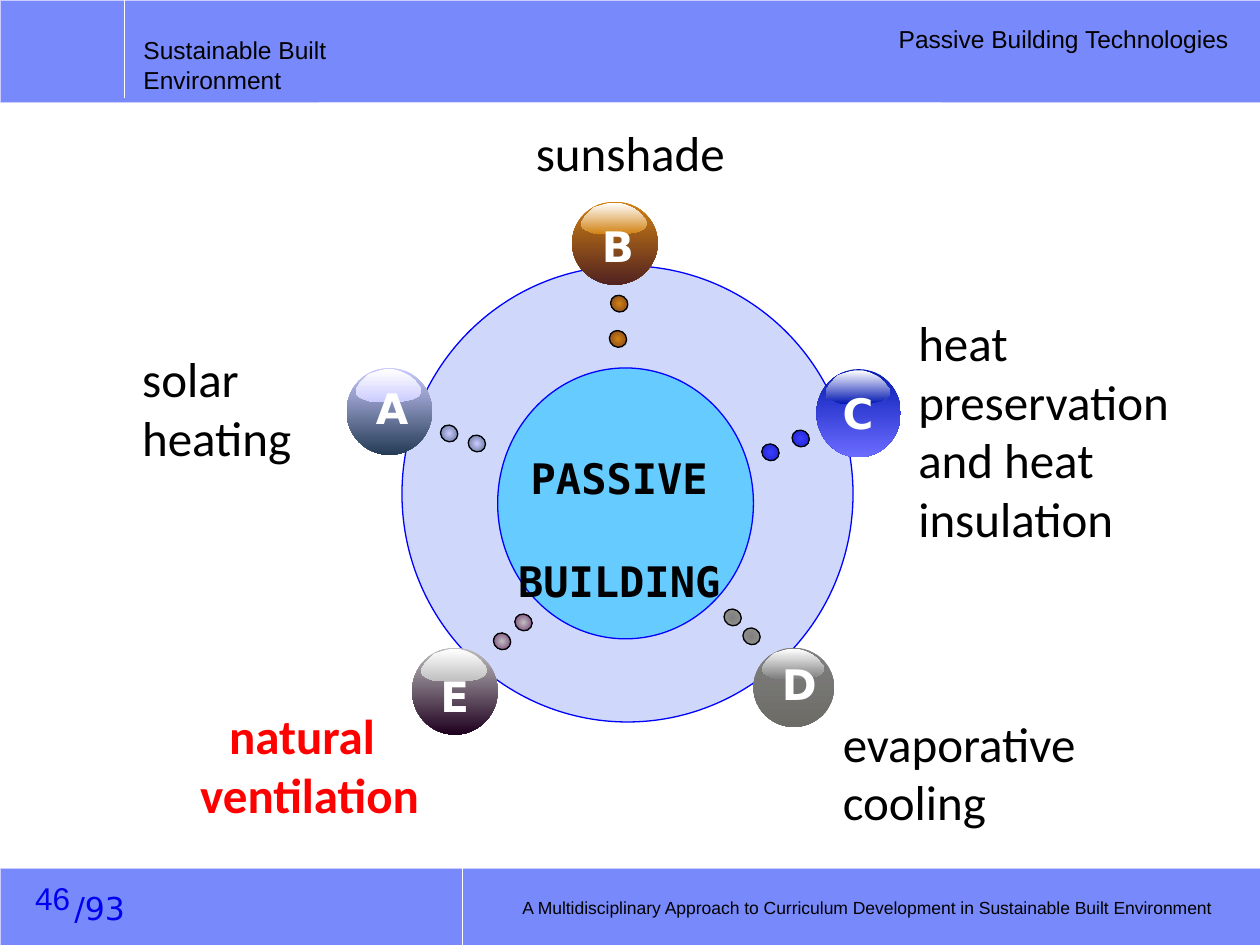
from lxml import etree
from pptx import Presentation
from pptx.dml.color import RGBColor
from pptx.enum.shapes import MSO_CONNECTOR, MSO_SHAPE
from pptx.enum.text import MSO_ANCHOR, PP_ALIGN
from pptx.oxml.ns import qn
from pptx.util import Inches, Pt

RECT, OVAL = MSO_SHAPE.RECTANGLE, MSO_SHAPE.OVAL
STRAIGHT = MSO_CONNECTOR.STRAIGHT
LEFT, CENTER, RIGHT = PP_ALIGN.LEFT, PP_ALIGN.CENTER, PP_ALIGN.RIGHT
TOP, MIDDLE = MSO_ANCHOR.TOP, MSO_ANCHOR.MIDDLE

BLACK = RGBColor(0x00, 0x00, 0x00)
WHITE = RGBColor(0xFF, 0xFF, 0xFF)
RED = RGBColor(0xFF, 0x00, 0x00)
BAND = RGBColor(0x78, 0x89, 0xFB)
LAVENDER = RGBColor(0xCC, 0xCC, 0xFF)
RING = RGBColor(0xCF, 0xD7, 0xFB)
CORE = RGBColor(0x66, 0xCC, 0xFF)
OUTLINE = RGBColor(0x00, 0x00, 0xFF)
PAGE_BLUE = RGBColor(0x00, 0x00, 0xF0)
AMBER = RGBColor(0xD1, 0x82, 0x13)
BROWN = RGBColor(0x51, 0x22, 0x21)
DOT_BROWN = RGBColor(0x5A, 0x25, 0x24)
SILVER = RGBColor(0xC0, 0xC0, 0xC0)
DARK_PLUM = RGBColor(0x1F, 0x00, 0x1F)
PLUM = RGBColor(0x55, 0x00, 0x55)
ROYAL = RGBColor(0x05, 0x1A, 0xB3)
PERIWINKLE = RGBColor(0x6C, 0x6C, 0xFF)
BRIGHT_BLUE = RGBColor(0x3E, 0x3E, 0xFF)
GRAY = RGBColor(0x80, 0x80, 0x80)
DARK_GRAY = RGBColor(0x6C, 0x6B, 0x66)
WARM_GRAY = RGBColor(0x9F, 0x9D, 0x96)
NAVY = RGBColor(0x24, 0x3B, 0x56)
SLATE = RGBColor(0x2A, 0x45, 0x65)

# Outline of the gloss on a ball, in hundredths of an inch
GLOSS_WIDTH, GLOSS_HEIGHT = 52, 26
GLOSS = [(51, 14), (52, 16), (52, 19), (50, 21), (49, 22), (45, 24), (40, 25),
         (35, 26), (18, 26), (13, 26), (9, 25), (4, 23), (1, 21), (0, 19),
         (0, 16), (2, 13), (3, 11), (6, 8), (10, 4), (13, 3), (19, 1), (23, 0),
         (30, 0), (36, 2), (42, 5), (47, 9), (49, 12)]

# letter, ball box, letter left/top/width, ball colours, dot colours, dot corners
BALLS = [
    ("B", (4.54, 1.6, 0.68, 0.66), (4.66, 1.7, 0.47), (AMBER, BROWN),
     (AMBER, DOT_BROWN), [(4.85, 2.34), (4.84, 2.62)]),
    ("E", (3.27, 5.14, 0.68, 0.69), (3.38, 5.27, 0.44), (SILVER, DARK_PLUM),
     (SILVER, PLUM), [(3.92, 5.02), (4.09, 4.87)]),
    ("C", (6.48, 2.93, 0.67, 0.7), (6.58, 3.03, 0.45), (ROYAL, PERIWINKLE),
     (BRIGHT_BLUE, ROYAL), [(6.29, 3.41), (6.05, 3.52)]),
    ("D", (5.98, 5.14, 0.64, 0.63), (6.09, 5.18, 0.49), (GRAY, DARK_GRAY),
     (GRAY, WARM_GRAY), [(5.9, 4.98), (5.75, 4.83)]),
    ("A", (2.75, 2.92, 0.68, 0.69), (2.87, 2.99, 0.47), (LAVENDER, NAVY),
     (LAVENDER, SLATE), [(3.5, 3.37), (3.72, 3.45)]),
]

TECHNIQUES = [
    ("solar heating", (1.03, 2.72, 2.09, 1.03), LEFT),
    ("sunshade", (3.3, 0.92, 2.55, 0.57), RIGHT),
    ("heat preservation and heat insulation", (7.19, 2.43, 2.66, 1.97), LEFT),
    ("evaporative cooling", (6.59, 5.61, 2.28, 1.03), LEFT),
]


class SlideBuilder:
    label_font = "Calibri"
    header_font = "Arial"
    letter_font = "DejaVu Sans"
    core_font = "DejaVu Sans Mono"

    def __init__(self, slide):
        self.shapes = slide.shapes

    def shape(self, kind, box, fill=None, line=None, line_width=0.75):
        shape = self.shapes.add_shape(kind, *map(Inches, box))
        shape.shadow.inherit = False
        if fill is not None:
            shape.fill.solid()
            shape.fill.fore_color.rgb = fill
        if line is None:
            shape.line.fill.background()
        else:
            shape.line.color.rgb = line
            shape.line.width = Pt(line_width)
        return shape

    def divider(self, x, top, bottom):
        line = self.shapes.add_connector(
            STRAIGHT, Inches(x), Inches(top), Inches(x), Inches(bottom))
        line.line.color.rgb = WHITE
        line.line.width = Pt(0.75)
        etree.SubElement(line._element.spPr, qn("a:effectLst"))

    def text(self, box, lines, size, font, color=BLACK, bold=False, align=LEFT,
             anchor=TOP, gap=0):
        """Add a text box; gap is the space in points between its paragraphs."""
        frame = self.shapes.add_textbox(*map(Inches, box)).text_frame
        frame.word_wrap = True
        frame.vertical_anchor = anchor
        frame.text = "\n".join(lines)
        for index, paragraph in enumerate(frame.paragraphs):
            paragraph.alignment = align
            if index and gap:
                paragraph.space_before = Pt(gap)
            paragraph.font.size = Pt(size)
            paragraph.font.name = font
            paragraph.font.bold = bold
            paragraph.font.color.rgb = color
        return frame

    def gradient(self, shape, colors, radial=False):
        """Blend two colours from top to bottom, or from the centre outwards."""
        shape.fill.gradient()
        for stop, color in zip(shape.fill.gradient_stops, colors):
            stop.color.rgb = color
        shape.fill.gradient_angle = 270
        if radial:
            linear = shape._element.spPr.find(qn("a:gradFill")).find(qn("a:lin"))
            circle = etree.Element(qn("a:path"), path="circle")
            etree.SubElement(circle, qn("a:fillToRect"),
                             l="50000", t="50000", r="50000", b="50000")
            linear.getparent().replace(linear, circle)

    def gloss(self, ball_box, color):
        left, top, width, height = ball_box
        scale = (Inches(0.765 * width) / GLOSS_WIDTH,
                 Inches(0.375 * height) / GLOSS_HEIGHT)
        builder = self.shapes.build_freeform(*GLOSS[0], scale=scale)
        builder.add_line_segments(GLOSS[1:], close=True)
        gloss = builder.convert_to_shape(Inches(left + 0.11 * width), Inches(top + 0.01))
        gloss.shadow.inherit = False
        gloss.line.fill.background()
        self.gradient(gloss, (WHITE, color))

    def ball(self, letter, box, letter_spot, colors):
        self.gradient(self.shape(OVAL, box), colors)
        self.gloss(box, colors[0])
        self.text((*letter_spot, 0.51), [letter], 24, self.letter_font, WHITE,
                  bold=True, align=RIGHT)

    def dot(self, corner, colors):
        dot = self.shape(OVAL, (*corner, 0.13, 0.14), line=BLACK)
        dot.rotation = 303
        self.gradient(dot, colors, radial=True)


def add_frame(page):
    """Add the header and footer bands with their texts."""
    page.shape(RECT, (0, 6.89, 10, 0.61), BAND, LAVENDER, 0.25)
    page.shape(RECT, (0, 0, 10, 0.81), BAND, LAVENDER, 0.25)
    page.divider(0.99, 0, 0.78)
    page.divider(3.67, 6.88, 7.5)
    course = page.text((1.04, 0.23, 2.79, 0.33), ["Sustainable Built Environment"],
                       14, page.header_font)
    course.margin_right = Inches(1.1)
    page.text((7, 0.14, 2.85, 0.43), ["Passive Building Technologies"], 14,
              page.header_font, align=RIGHT)
    page.text((0.27, 7.01, 0.82, 0.4), ["/93"], 18, page.letter_font, PAGE_BLUE,
              align=RIGHT)
    page.text((3.92, 7.07, 5.79, 0.27),
              ["A Multidisciplinary Approach to Curriculum Development in "
               "Sustainable Built Environment"],
              10, page.header_font, align=RIGHT, anchor=MIDDLE)
    page.text((0.18, 6.93, 2.33, 0.4), ["46"], 18, page.header_font, PAGE_BLUE,
              anchor=MIDDLE)


def add_wheel(page):
    page.shape(OVAL, (3.19, 2.11, 3.58, 3.62), RING, OUTLINE)
    page.shape(OVAL, (3.95, 2.92, 2.03, 2.15), CORE, OUTLINE)
    page.text((3.98, 3.54, 1.87, 0.9), ["PASSIVE", "BUILDING"], 24, page.core_font,
              bold=True, align=CENTER, gap=30)
    for letter, box, letter_spot, ball_colors, dot_colors, corners in BALLS:
        page.ball(letter, box, letter_spot, ball_colors)
        for corner in corners:
            page.dot(corner, dot_colors)


def add_techniques(page):
    for name, box, align in TECHNIQUES:
        page.text(box, [name], 28, page.label_font, align=align)
    current = page.text((1.49, 5.55, 2.62, 1.03), ["natural ventilation"], 28,
                        page.label_font, RED, bold=True)
    properties = current.paragraphs[0]._p.get_or_add_pPr()
    properties.set("indent", str(Inches(0.23)))


def main():
    deck = Presentation()
    deck.slide_width, deck.slide_height = Inches(10), Inches(7.5)
    page = SlideBuilder(deck.slides.add_slide(deck.slide_layouts[6]))
    add_frame(page)
    add_wheel(page)
    add_techniques(page)
    deck.save("out.pptx")


if __name__ == "__main__":
    main()
